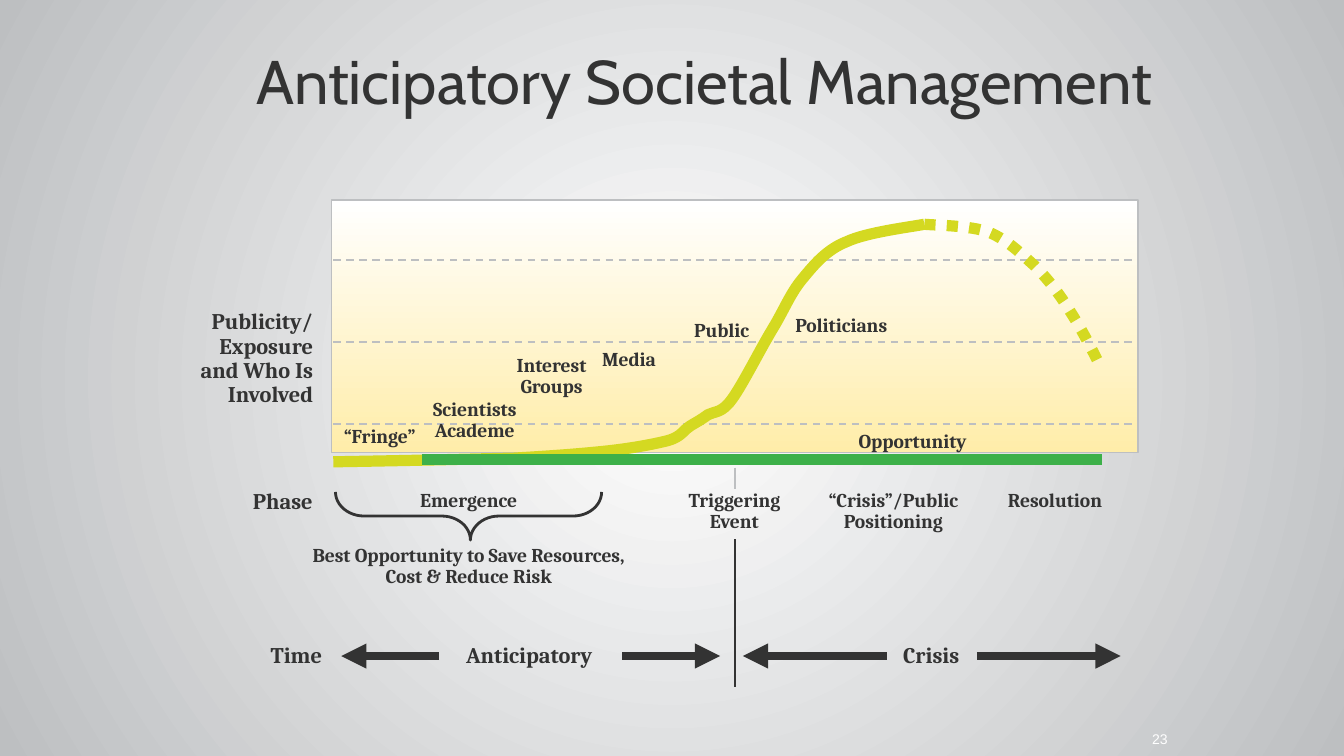
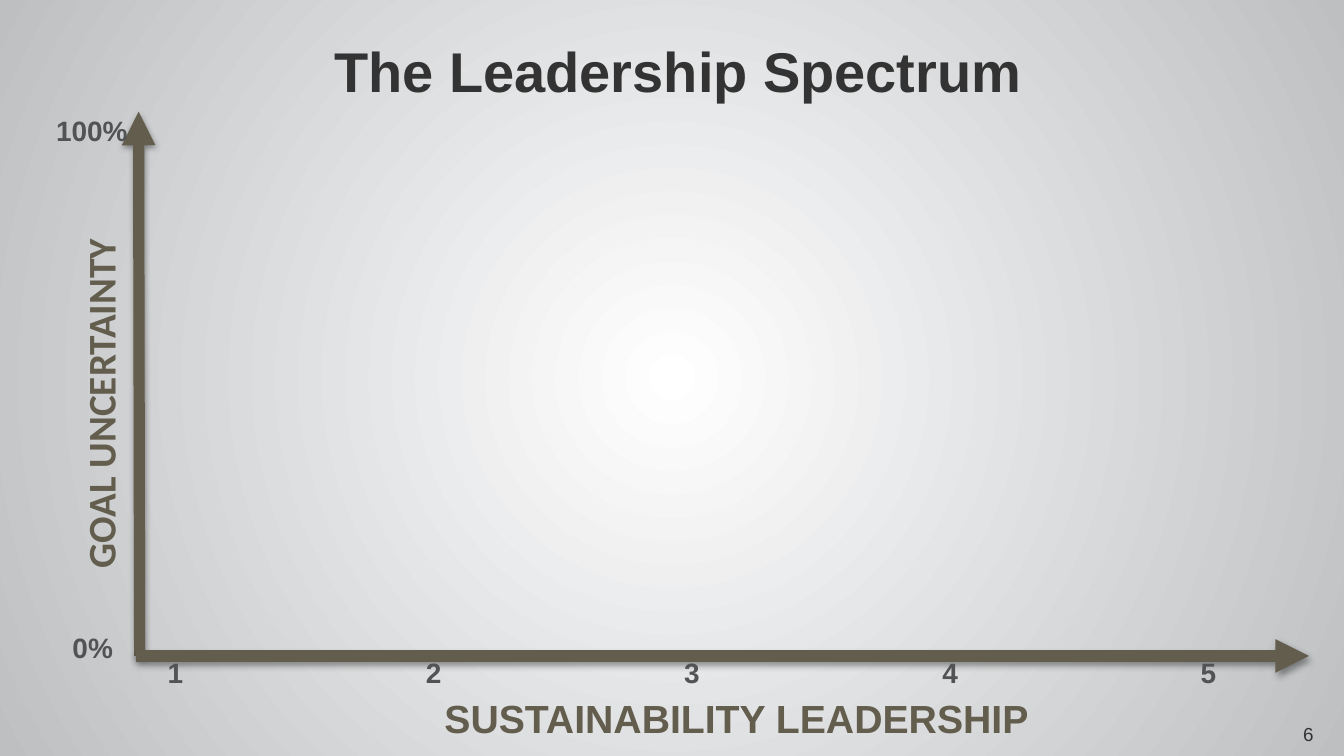
from collections import namedtuple

from lxml import etree
from pptx import Presentation
from pptx.dml.color import RGBColor
from pptx.enum.dml import MSO_LINE
from pptx.enum.shapes import MSO_CONNECTOR, MSO_SHAPE
from pptx.enum.text import MSO_ANCHOR, MSO_AUTO_SIZE, PP_ALIGN
from pptx.oxml.ns import qn
from pptx.util import Cm, Pt

STRAIGHT = MSO_CONNECTOR.STRAIGHT
RECTANGLE, RIGHT_BRACE = MSO_SHAPE.RECTANGLE, MSO_SHAPE.RIGHT_BRACE
DASH, DOTS = MSO_LINE.DASH, MSO_LINE.ROUND_DOT
LEFT, CENTER, RIGHT = PP_ALIGN.LEFT, PP_ALIGN.CENTER, PP_ALIGN.RIGHT
TOP, MIDDLE, BOTTOM = MSO_ANCHOR.TOP, MSO_ANCHOR.MIDDLE, MSO_ANCHOR.BOTTOM
NO_FIT, GROW = MSO_AUTO_SIZE.NONE, MSO_AUTO_SIZE.SHAPE_TO_FIT_TEXT

WHITE = RGBColor(0xFF, 0xFF, 0xFF)
SILVER = RGBColor(0xBD, 0xBF, 0xC1)
CREAM = RGBColor(0xFF, 0xED, 0xA9)
INK = RGBColor(0x33, 0x33, 0x33)
GRAY = RGBColor(0x51, 0x53, 0x55)
OLIVE = RGBColor(0x63, 0x5D, 0x4E)
LIME = RGBColor(0xD4, 0xD9, 0x21)
GREEN = RGBColor(0x3D, 0xB0, 0x49)

DEFAULT_INSETS = (0.25, 0.13, 0.25, 0.13)
LABEL_INSETS = (0.18, 0.1, 0.18, 0.1)
NO_INSETS = (0, 0, 0, 0)

# All lengths are centimetres
Box = namedtuple("Box", "left top width height")


def inside(region, left, top, width, height):
    """Turn a place relative to a region into a place on the slide."""
    return Box(region.left + left, region.top + top, width, height)


def add_text(slide, box, text, size, font, color, bold=False, align=LEFT,
             anchor=TOP, insets=DEFAULT_INSETS, wrap=True, fit=GROW, spacing=1.0):
    text_box = slide.shapes.add_textbox(*map(Cm, box))
    frame = text_box.text_frame
    frame.word_wrap = wrap
    frame.auto_size = fit
    frame.vertical_anchor = anchor
    (frame.margin_left, frame.margin_top,
     frame.margin_right, frame.margin_bottom) = map(Cm, insets)
    paragraph = frame.paragraphs[0]
    paragraph.alignment = align
    paragraph.line_spacing = spacing
    for number, line in enumerate(text.split("\n")):
        if number:
            paragraph.add_line_break()
        run = paragraph.add_run()
        run.text = line
        run.font.size = Pt(size)
        run.font.name = font
        run.font.bold = bold
        run.font.color.rgb = color
    return text_box


def add_label(slide, box, text, size=10.5, align=CENTER, insets=LABEL_INSETS,
              wrap=True):
    add_text(slide, box, text, size, "Cambria", INK, True, align,
             insets=insets, wrap=wrap, spacing=0.9)


def style_line(line, color, width, dash=None):
    line.color.rgb = color
    line.width = Pt(width)
    if dash:
        line.dash_style = dash


def add_line(slide, region, start, end, color, width, dash=None, arrow=False,
             shadow=False):
    connector = slide.shapes.add_connector(
        STRAIGHT,
        Cm(region.left + start[0]), Cm(region.top + start[1]),
        Cm(region.left + end[0]), Cm(region.top + end[1]))
    style_line(connector.line, color, width, dash)
    properties = connector.element.spPr
    if arrow:
        etree.SubElement(properties.find(qn("a:ln")), qn("a:tailEnd"), type="triangle")
    effects = etree.SubElement(properties, qn("a:effectLst"))
    if shadow:
        outer = etree.SubElement(
            effects, qn("a:outerShdw"), blurRad=str(Pt(3.1)), dist=str(Pt(1.6)),
            dir="5400000", rotWithShape="0")
        black = etree.SubElement(outer, qn("a:srgbClr"), val="000000")
        etree.SubElement(black, qn("a:alpha"), val="38000")


def add_curve(slide, region, points, color, width, dash=None):
    """Draw Bézier arcs: a start point, then three points for each arc."""
    placed = [(Cm(region.left + x), Cm(region.top + y)) for x, y in points]
    builder = slide.shapes.build_freeform(*placed[0])
    builder.add_line_segments(placed[1:], close=False)
    curve = builder.convert_to_shape()
    outline = curve.element.find(".//" + qn("a:path"))
    segments = outline.findall(qn("a:lnTo"))
    for first in range(0, len(segments), 3):
        arc = etree.SubElement(outline, qn("a:cubicBezTo"))
        for segment in segments[first:first + 3]:
            arc.append(segment[0])
            outline.remove(segment)
    curve.fill.background()
    curve.shadow.inherit = False
    style_line(curve.line, color, width, dash)


def set_gradient(fill, start, end):
    fill.gradient()
    for stop, color in zip(fill.gradient_stops, (start, end)):
        stop.color.rgb = color


def set_background(master):
    set_gradient(master.background.fill, WHITE, SILVER)
    gradient = master.element.find(".//" + qn("p:bg")).find(".//" + qn("a:gradFill"))
    direction = gradient.find(qn("a:lin"))
    if direction is not None:
        gradient.remove(direction)
    circle = etree.SubElement(gradient, qn("a:path"), path="circle")
    etree.SubElement(circle, qn("a:fillToRect"), l="50000", t="50000",
                     r="50000", b="50000")


# Slide 1: publicity over time
RISE = [(0.03, 4.95), (1.32, 4.93), (2.59, 4.9), (3.45, 4.88),
        (4.29, 4.83), (4.67, 4.8), (5.16, 4.75), (5.64, 4.7), (6.07, 4.62),
        (6.35, 4.55), (6.63, 4.47), (6.65, 4.34), (6.78, 4.27),
        (6.91, 4.19), (6.96, 4.17), (7.11, 4.06), (7.24, 3.99), (7.37, 4.04),
        (7.57, 3.76), (7.77, 3.48), (8.1, 2.82), (8.33, 2.44),
        (8.56, 2.06), (8.66, 1.78), (8.89, 1.5), (9.12, 1.22), (9.35, 0.94),
        (9.73, 0.79), (10.11, 0.61), (10.95, 0.51), (11.2, 0.46)]
DECLINE = [(11.2, 0.46), (11.4, 0.48), (12.07, 0.48), (12.42, 0.61),
           (12.78, 0.76), (13.03, 1.02), (13.28, 1.24),
           (13.54, 1.5), (13.77, 1.8), (13.97, 2.13),
           (14.17, 2.44), (14.35, 2.79), (14.53, 3.15)]
ACTORS = [("Politicians", 8.18, 2.08, 2.9, 0.58),
          ("Public", 5.92, 2.18, 2.9, 0.58),
          ("Media", 4.17, 2.72, 2.9, 0.58),
          ("Interest Groups", 2.95, 2.84, 2.41, 0.99),
          ("Scientists Academe", 1.5, 3.68, 2.41, 0.99),
          ("“Fringe”", -0.08, 4.19, 1.98, 0.58),
          ("Opportunity", 9.53, 4.27, 2.9, 0.58)]
PHASES = [("Emergence", 1.14, 0, 2.9, 0.58),
          ("Triggering Event", 6.38, 0, 2.46, 0.99),
          ("“Crisis”/Public Positioning", 9.09, 0, 3.05, 0.99),
          ("Resolution", 12.22, 0, 2.9, 0.58),
          ("Best Opportunity to Save Resources, Cost & Reduce Risk",
           -0.61, 1.04, 6.4, 0.99)]
TRIGGER_X = 7.62


def publicity_panel(slide, region):
    panel = slide.shapes.add_shape(RECTANGLE, *map(Cm, region))
    set_gradient(panel.fill, WHITE, CREAM)
    panel.fill.gradient_angle = 270
    panel.shadow.inherit = False
    style_line(panel.line, SILVER, 0.75)
    for level in range(3):
        y = 1.14 + 1.55 * level
        add_line(slide, region, (0.03, y), (region.width - 0.03, y), SILVER, 1, DASH)
    add_label(slide, inside(region, -2.89, 1.99, 2.72, 2.03),
              "Publicity/\nExposure\nand Who Is Involved", 12, RIGHT)
    # Exposure curve, the actors along it, and the opportunity bar
    add_curve(slide, region, RISE, LIME, 6)
    for actor, *place in ACTORS:
        add_label(slide, inside(region, *place), actor)
    add_curve(slide, region, DECLINE, LIME, 6, DOTS)
    add_line(slide, region, (1.7, 4.9), (14.55, 4.9), GREEN, 6)


def phase_row(slide, region):
    add_line(slide, region, (TRIGGER_X, -0.33), (TRIGGER_X, 0.08), SILVER, 1)
    add_label(slide, inside(region, -2.08, 0, 1.9, 0.66), "Phase", 12, RIGHT)
    for phase, *place in PHASES:
        add_label(slide, inside(region, *place), phase)
    brace = slide.shapes.add_shape(
        RIGHT_BRACE, *map(Cm, inside(region, 2.13, -1.93, 0.91, 5.03)))
    brace.rotation = 90
    brace.adjustments[0] = 0.594
    brace.adjustments[1] = 0.493
    brace.fill.background()
    brace.shadow.inherit = False
    style_line(brace.line, INK, 1.5)


def time_row(slide, region):
    middle = region.height / 2
    for name, left, width, align in (("Time", -1.22, 1.04, RIGHT),
                                     ("Anticipatory", 2.54, 2.54, LEFT),
                                     ("Crisis", 10.8, 1.14, LEFT)):
        add_label(slide, inside(region, left, 0, width, region.height), name, 12,
                  align, NO_INSETS, wrap=False)
    for start, tip in ((5.49, 7.34), (2.03, 0.18), (10.49, 7.77), (12.19, 14.91)):
        add_line(slide, region, (start, middle), (tip, middle), INK, 4.5, arrow=True)
    add_line(slide, region, (TRIGGER_X, 0.81), (TRIGGER_X, -1.98), INK, 1)


def management_slide(slide):
    add_text(slide, Box(21.69, 13.74, 0.38, 0.38), "23", 7.5, "Arial", WHITE,
             align=RIGHT, anchor=BOTTOM, insets=NO_INSETS, wrap=False, fit=NO_FIT)
    publicity_panel(slide, Box(6.27, 3.78, 15.24, 4.78))
    phase_row(slide, Box(6.27, 9.17, 15.24, 2.03))
    time_row(slide, Box(6.27, 12.17, 15.24, 0.46))
    add_text(slide, Box(3.81, 0.48, 19, 2.06), "Anticipatory Societal Management",
             33, "Cabin", INK, align=CENTER, anchor=MIDDLE, fit=NO_FIT)


# Slide 2: empty leadership axes
def leadership_axes(slide, region):
    floor = region.height
    add_line(slide, region, (0.07, floor), (0.05, 0), OLIVE, 6, arrow=True, shadow=True)
    add_line(slide, region, (0, floor), (region.width, floor), OLIVE, 6, arrow=True,
             shadow=True)
    # Axis titles
    uncertainty = add_text(slide, inside(region, -5.36, 4.95, 9.35, 1.14),
                           "GOAL UNCERTAINTY", 21, "Calibri", OLIVE, True, CENTER)
    uncertainty.rotation = 270
    add_text(slide, inside(region, 5.58, 10.89, 11.66, 1.14),
             "SUSTAINABILITY LEADERSHIP", 21, "Arial", OLIVE, True, wrap=False)
    # Scale values
    scale = [(str(step + 1), 0.35 + 4.88 * step, 10.16, 0.81) for step in range(5)]
    scale += [("0%", -1.45, 9.68, 1.3), ("100%", -1.76, -0.1, 1.88)]
    for value, left, top, width in scale:
        add_text(slide, inside(region, left, top, width, 0.89), value, 15, "Arial",
                 GRAY, True, wrap=False)


def leadership_slide(slide):
    leadership_axes(slide, Box(2.57, 2.11, 22.17, 10.29))
    add_text(slide, Box(6.32, 0.28, 18.5, 2.18), "The Leadership Spectrum", 30,
             "Arial", INK, True, anchor=MIDDLE, insets=(0, 0.13, 0.25, 0),
             fit=NO_FIT, spacing=0.8)
    add_text(slide, Box(24.38, 13.54, 0.71, 0.69), "6", 10.1, "Arial", INK, wrap=False)


def main():
    presentation = Presentation()
    presentation.slide_width, presentation.slide_height = Cm(25.4), Cm(14.29)
    set_background(presentation.slide_master)
    blank = presentation.slide_layouts[6]
    for build in (management_slide, leadership_slide):
        build(presentation.slides.add_slide(blank))
    presentation.save("out.pptx")


if __name__ == "__main__":
    main()
